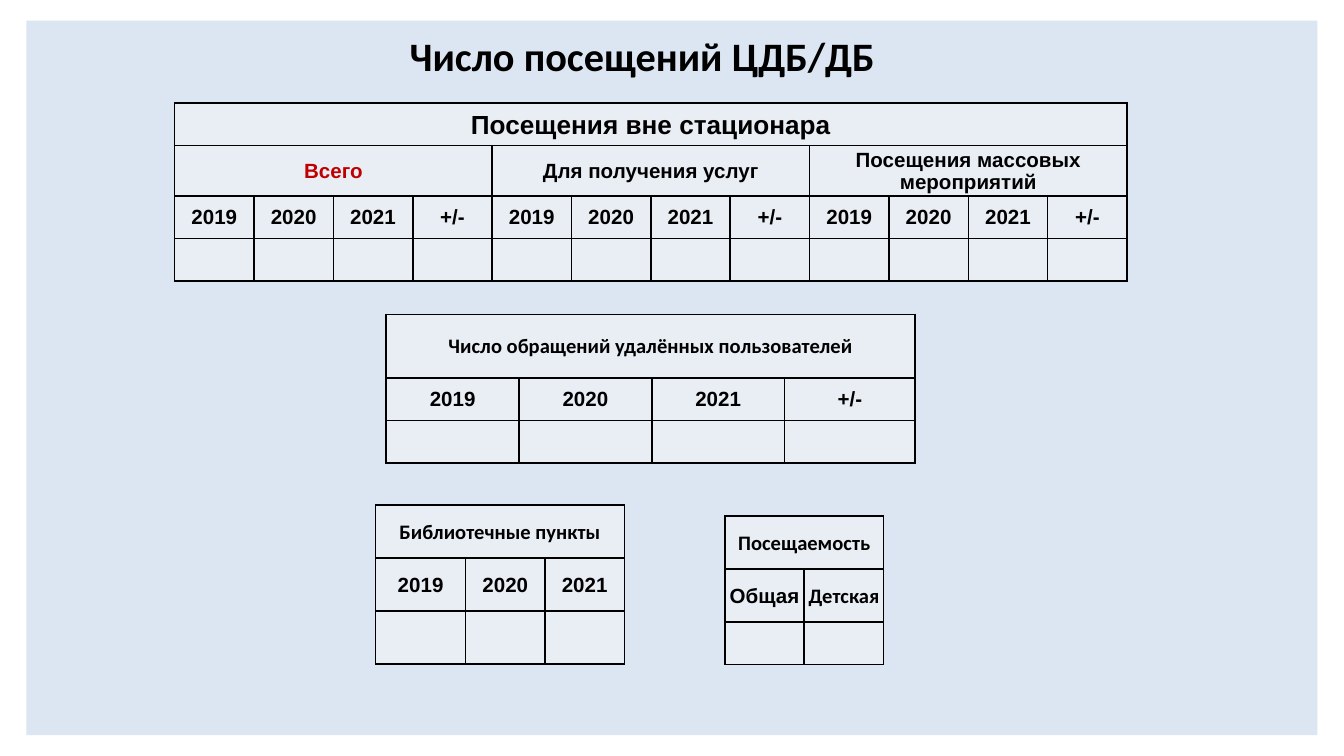
import pptx
import pptx.util
import pptx.dml.color
import pptx.enum.shapes
import pptx.enum.text
import pptx.oxml
import pptx.oxml.ns

Cm = pptx.util.Cm
Pt = pptx.util.Pt
CENTER = pptx.enum.text.PP_ALIGN.CENTER
MIDDLE = pptx.enum.text.MSO_ANCHOR.MIDDLE

TITLE = "Число посещений ЦДБ/ДБ"
YEARS = ["2019", "2020", "2021"]
YEARS_DIFF = YEARS + ["+/-"]
PANEL, CELL, BLACK, RED = "DCE6F2", "E9EDF4", "000000", "C00000"

ARIAL = {"name": "Arial", "size": Pt(11), "bold": True}
CALIBRI = {**ARIAL, "name": "Calibri"}
HEADING = {**ARIAL, "size": Pt(14)}
TITLE_FONT = {**CALIBRI, "size": Pt(21.6)}


def labels(texts, fmt=ARIAL):
    """Single-column cells: (text, columns spanned, font, colour)."""
    return [(text, 1, fmt, BLACK) for text in texts]


# Lengths in cm; a row without labels stays empty.
TABLES = [
    {"at": (7.1, 9.54), "cols": [1.7, 1.5, 1.5], "rows": [1, 1, 1],
     "cells": [[("Библиотечные пункты", 3, CALIBRI, BLACK)],
               labels(YEARS), []]},
    {"at": (3.3, 1.95), "cols": [1.5] * 12, "rows": [0.8, 0.89, 0.8, 0.8],
     "cells": [[("Посещения вне стационара", 12, HEADING, BLACK)],
               [("Всего", 4, ARIAL, RED),
                ("Для получения услуг", 4, ARIAL, BLACK),
                ("Посещения массовых мероприятий", 4, ARIAL, BLACK)],
               labels(YEARS_DIFF * 3), []]},
    {"at": (7.3, 5.94), "cols": [2.51] * 3 + [2.47], "rows": [1.2, 0.8, 0.8],
     "cells": [[("Число обращений удалённых пользователей", 4, CALIBRI, BLACK)],
               labels(YEARS_DIFF), []]},
    {"at": (13.7, 9.75), "cols": [1.5, 1.5], "rows": [1, 1, 0.8],
     "cells": [[("Посещаемость", 2, CALIBRI, BLACK)],
               labels(["Общая"]) + labels(["Детская"], CALIBRI), []]},
]


def rgb(color):
    return pptx.dml.color.RGBColor.from_string(color)


def write(tf, text, fmt, color):
    p = tf.paragraphs[0]
    p.alignment = CENTER
    r = p.add_run()
    r.text = text
    for key, value in fmt.items():
        setattr(r.font, key, value)
    r.font.color.rgb = rgb(color)


def style_cell(cell):
    tc_pr = cell._tc.get_or_add_tcPr()
    for side in "LRTB":
        tc_pr.append(pptx.oxml.parse_xml(
            f'<a:ln{side} {pptx.oxml.ns.nsdecls("a")} w="{Pt(1)}"><a:solidFill>'
            f'<a:srgbClr val="{BLACK}"/></a:solidFill></a:ln{side}>'))
    cell.fill.solid()
    cell.fill.fore_color.rgb = rgb(CELL)
    cell.vertical_anchor = MIDDLE
    cell.margin_left = cell.margin_right = cell.margin_top = Cm(0.02)
    cell.margin_bottom = 0


def add_table(s, at, cols, rows, cells):
    box = [Cm(v) for v in (*at, sum(cols), sum(rows))]
    table = s.shapes.add_table(len(rows), len(cols), *box).table
    table.first_row = table.horz_banding = False
    for lines, sizes, side in ((table.columns, cols, "width"),
                               (table.rows, rows, "height")):
        for line, size in zip(lines, sizes):
            setattr(line, side, Cm(size))
    for cell in table.iter_cells():
        style_cell(cell)
    for i, row in enumerate(cells):
        j = 0
        for text, span, fmt, color in row:
            cell = table.cell(i, j)
            if span > 1:
                cell.merge(table.cell(i, j + span - 1))
            write(cell.text_frame, text, fmt, color)
            j += span


prs = pptx.Presentation()
prs.slide_width, prs.slide_height = Cm(25.4), Cm(14.28)
s = prs.slides.add_slide(prs.slide_layouts[6])

panel = s.shapes.add_shape(pptx.enum.shapes.MSO_SHAPE.RECTANGLE,
                           Cm(0.5), Cm(0.39), Cm(24.4), Cm(13.5))
panel.shadow.inherit = False
panel.fill.solid()
panel.fill.fore_color.rgb = rgb(PANEL)
panel.line.fill.background()

title = s.shapes.add_textbox(Cm(3.1), Cm(0.53), Cm(18.08), Cm(1.04))
tf = title.text_frame
tf.word_wrap = True
tf.vertical_anchor = MIDDLE
write(tf, TITLE, TITLE_FONT, BLACK)

for table in TABLES:
    add_table(s, **table)

prs.save("out.pptx")
